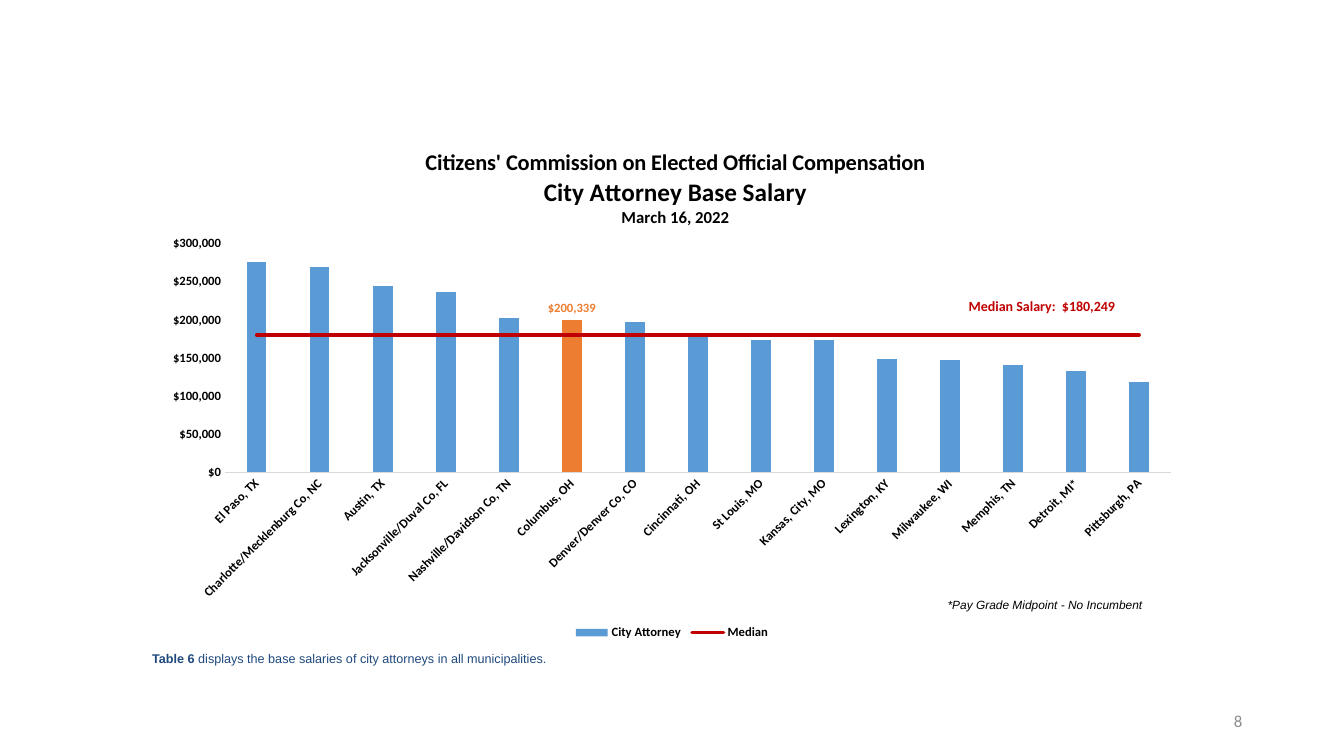
import lxml.etree
import pptx
import pptx.chart.data
import pptx.dml.color
import pptx.enum.chart
import pptx.enum.text
import pptx.oxml.ns
import pptx.util

Inches, Pt = pptx.util.Inches, pptx.util.Pt
qn = pptx.oxml.ns.qn
BLACK, BLUE, ORANGE, RED = "000000", "5B9BD5", "ED7D31", "C00000"


def style(font, size, color, name="Calibri", bold=False, italic=False):
    font.size, font.name, font.bold, font.italic = Pt(size), name, bold, italic
    font.color.rgb = pptx.dml.color.RGBColor.from_string(color)


def set_layout(parent, index, **settings):
    """Give a chart part a manual layout as shares of the chart's size."""
    for old in parent.findall(qn("c:layout")):
        parent.remove(old)
    layout = lxml.etree.Element(qn("c:layout"))
    parent.insert(index, layout)
    manual = lxml.etree.SubElement(layout, qn("c:manualLayout"))
    for tag, value in settings.items():
        lxml.etree.SubElement(manual, qn("c:" + tag)).set("val", str(value))


prs = pptx.Presentation()
prs.slide_width, prs.slide_height = Inches(13.33), Inches(7.5)
slide = prs.slides.add_slide(prs.slide_layouts[6])

# Salary chart
salaries = {
    "El Paso, TX": 276054,
    "Charlotte/Mecklenburg Co, NC": 269462,
    "Austin, TX": 244920,
    "Jacksonville/Duval Co, FL": 236205,
    "Nashville/Davidson Co, TN": 202239,
    "Columbus, OH": 200339,
    "Denver/Denver Co, CO": 196650,
    "Cincinnati, OH": 180249,
    "St Louis, MO": 174174,
    "Kansas, City, MO": 173064,
    "Lexington, KY": 148420,
    "Milwaukee, WI": 147336,
    "Memphis, TN": 141000,
    "Detroit, MI*": 133111,
    "Pittsburgh, PA": 118213,
}
salary_data = pptx.chart.data.CategoryChartData(number_format='"$"#,##0')
salary_data.categories = list(salaries)
salary_data.add_series("City Attorney ", salaries.values())
salary_data.add_series("Median", [180000] * len(salaries))
chart = slide.shapes.add_chart(
    pptx.enum.chart.XL_CHART_TYPE.COLUMN_CLUSTERED,
    Inches(1.51), Inches(1.23), Inches(10.31), Inches(5.16), salary_data).chart
style(chart.font, 10, BLACK)

heading = chart.chart_title.text_frame
heading_lines = [("Citizens' Commission on Elected Official Compensation", 16),
                 ("City Attorney Base Salary", 18), ("March 16, 2022", 12)]
for number, (text, size) in enumerate(heading_lines):
    line = heading.add_paragraph() if number else heading.paragraphs[0]
    line.text = text
    style(line.font, size, BLACK, bold=True)
chart.chart_title.include_in_layout = False
set_layout(chart.chart_title._element, 1, xMode="edge", yMode="edge", x=0.26, y=0.04)

chart.has_legend = True
chart.legend.position = pptx.enum.chart.XL_LEGEND_POSITION.BOTTOM
chart.legend.include_in_layout = False
for axis in (chart.category_axis, chart.value_axis):
    axis.major_tick_mark = axis.minor_tick_mark = pptx.enum.chart.XL_TICK_MARK.NONE
    axis.has_major_gridlines = False
for part in (chart.legend.font, chart.category_axis.tick_labels.font,
             chart.value_axis.tick_labels.font):
    style(part, 9, BLACK, bold=True)

cities, dollars = chart.category_axis, chart.value_axis
cities.format.line.color.rgb = pptx.dml.color.RGBColor.from_string("D9D9D9")
cities.format.line.width = Pt(0.75)
cities._element.find(qn("c:txPr")).find(qn("a:bodyPr")).set("rot", "-2700000")
dollars.format.line.fill.background()
dollars.minimum_scale, dollars.maximum_scale, dollars.major_unit = 0, 300000, 50000
dollars.tick_labels.number_format = '"$"#,##0'
dollars.tick_labels.number_format_is_linked = False

columns = chart.plots[0]
columns.gap_width, columns.overlap, columns.vary_by_categories = 219, -27, False
attorney, median = columns.series
columbus = attorney.points[list(salaries).index("Columbus, OH")]
for bars, color in ((attorney, BLUE), (columbus, ORANGE)):
    bars.format.fill.solid()
    bars.format.fill.fore_color.rgb = pptx.dml.color.RGBColor.from_string(color)
attorney.data_labels.show_value = False
style(columbus.data_label.font, 9, ORANGE, bold=True)
columbus.data_label.position = pptx.enum.chart.XL_LABEL_POSITION.OUTSIDE_END

# The median becomes a line on the same axes
median.format.line.color.rgb = pptx.dml.color.RGBColor.from_string(RED)
median.format.line.width = Pt(2.25)
median_xml, bar_xml = median._element, columns._element
median_xml.find(".//" + qn("a:ln")).set("cap", "rnd")
for bar_only in median_xml.findall(qn("c:invertIfNegative")):
    median_xml.remove(bar_only)
marker = lxml.etree.Element(qn("c:marker"))
lxml.etree.SubElement(marker, qn("c:symbol")).set("val", "none")
median_xml.find(qn("c:spPr")).addnext(marker)
lxml.etree.SubElement(median_xml, qn("c:smooth")).set("val", "0")
line_xml = lxml.etree.Element(qn("c:lineChart"))
bar_xml.addnext(line_xml)
lxml.etree.SubElement(line_xml, qn("c:grouping")).set("val", "standard")
lxml.etree.SubElement(line_xml, qn("c:varyColors")).set("val", "0")
line_xml.append(median_xml)
lxml.etree.SubElement(line_xml, qn("c:marker")).set("val", "1")
for axis_id in bar_xml.findall(qn("c:axId")):
    lxml.etree.SubElement(line_xml, qn("c:axId")).set("val", axis_id.get("val"))
set_layout(bar_xml.getparent(), 0, layoutTarget="inner", xMode="edge", yMode="edge",
           x=0.07, y=0.23, w=0.91, h=0.44)

# Notes around the chart: place, inset, fill, runs of (text, size, color, font, bold, italic)
notes = [
    ((9.3, 5.88, 2.64, 0.37), True, "FFFFFF",
     [("*Pay Grade Midpoint - No Incumbent", 8.5, BLACK, "Arial", False, True)]),
    ((1.51, 6.46, 7.23, 0.36), False, "FFFFFF",
     [("Table 6 ", 9, "1F497D", "Arial", True),
      ("displays the base salaries of city attorneys in all municipalities.",
       9, "1F497D", "Arial")]),
    ((9.51, 2.9, 1.84, 0.24), True, "FFFFFF",
     [("Median Salary:  $180,249", 10, RED, "Calibri", True)]),
    ((9.42, 6.95, 3, 0.4), True, None, [("8", 12, "8C8C8C")]),
]
for place, inset, fill, runs in notes:
    note = slide.shapes.add_textbox(*map(Inches, place))
    frame = note.text_frame
    frame.word_wrap = True
    if fill:
        note.fill.solid()
        note.fill.fore_color.rgb = pptx.dml.color.RGBColor.from_string(fill)
    if not inset:
        frame.margin_left = frame.margin_right = frame.margin_top = frame.margin_bottom = 0
    for text, *look in runs:
        run = frame.paragraphs[0].add_run()
        run.text = text
        style(run.font, *look)

# The page number comes last
frame.vertical_anchor = pptx.enum.text.MSO_ANCHOR.MIDDLE
frame.paragraphs[0].alignment = pptx.enum.text.PP_ALIGN.RIGHT

prs.save("out.pptx")
